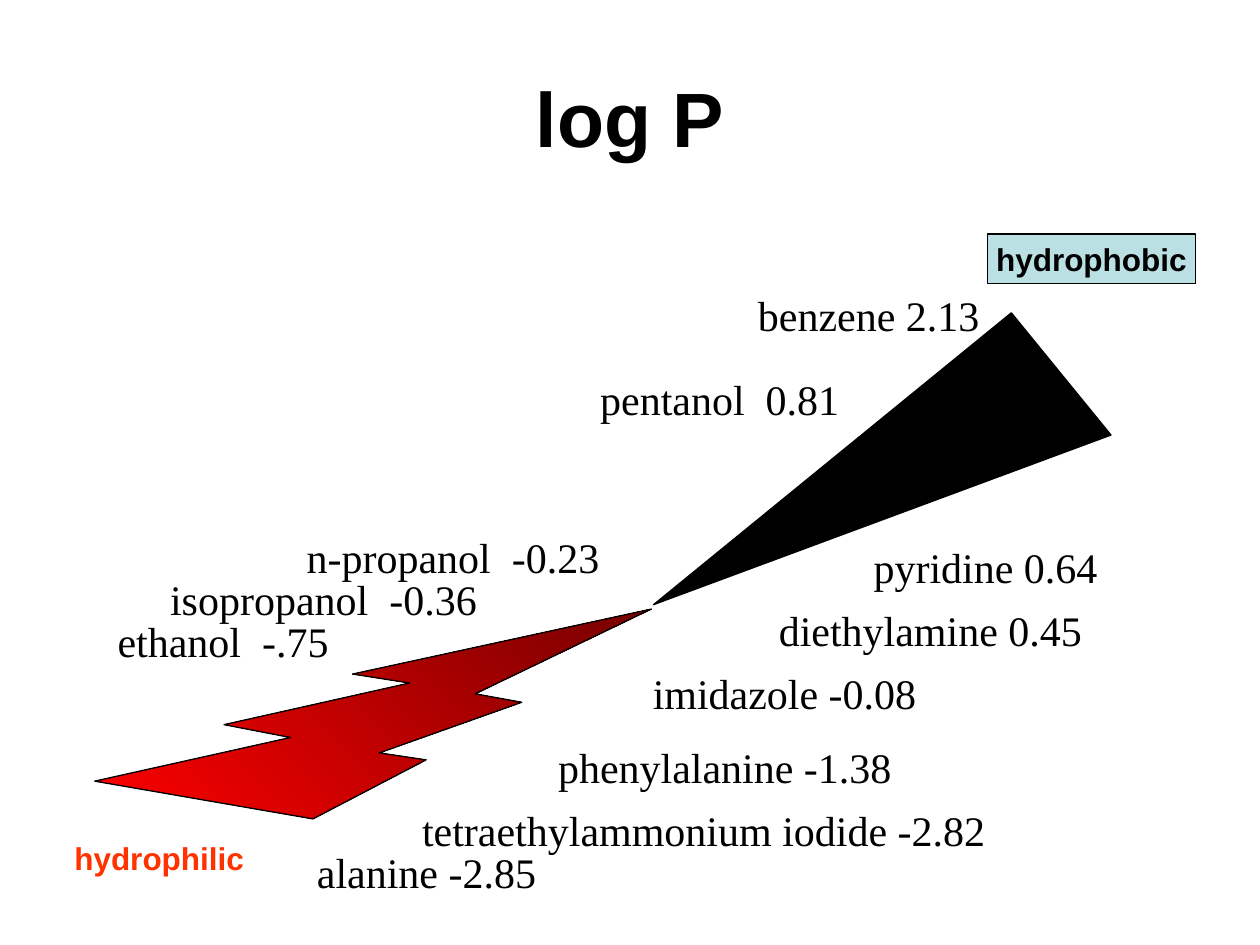
from dataclasses import dataclass

from pptx import Presentation
from pptx.dml.color import RGBColor as Rgb
from pptx.enum.shapes import MSO_SHAPE as Kind
from pptx.enum.text import MSO_ANCHOR as Anchor, MSO_AUTO_SIZE as Fit, PP_ALIGN as Align
from pptx.util import Cm, Pt


@dataclass(frozen=True)
class Theme:
    sans: str = "Arial"
    serif: str = "Times New Roman"
    black: str = "000000"
    red: str = "FF0000"
    maroon: str = "760000"
    orange: str = "FF3300"
    pale: str = "BBE0E3"
    head: int = 44
    body: int = 24
    tag: int = 18
    line: float = 0.75


def write(frame, text, font, size, color, bold=False, align=Align.LEFT,
          anchor=Anchor.TOP, wrap=True, fit=Fit.NONE):
    frame.word_wrap = wrap
    frame.auto_size = fit
    frame.vertical_anchor = anchor
    para = frame.paragraphs[0]
    para.alignment = align
    run = para.add_run()
    run.text = text
    run.font.name = font
    run.font.size = Pt(size)
    run.font.bold = bold
    run.font.color.rgb = Rgb.from_string(color)


class Page:
    def __init__(self, slide, theme):
        self.slide = slide
        self.theme = theme

    def title(self, text, box):
        t = self.theme
        head = self.slide.shapes.title
        head.left, head.top, head.width, head.height = map(Cm, box)
        write(head.text_frame, text, t.sans, t.head, t.black, bold=True,
              align=Align.CENTER, anchor=Anchor.MIDDLE)

    def label(self, text, box, **form):
        area = self.slide.shapes.add_textbox(*map(Cm, box))
        write(area.text_frame, text, fit=Fit.SHAPE_TO_FIT_TEXT, **form)

    def shape(self, kind, box, fill, turn=0, flip=False):
        """Draw a preset; a pair of colours as fill gives a gradient."""
        item = self.slide.shapes.add_shape(kind, *map(Cm, box))
        item.shadow.inherit = False
        item.rotation = turn
        if flip:
            item._element.spPr.xfrm.set("flipV", "1")
        if isinstance(fill, tuple):
            item.fill.gradient()
            item.fill.gradient_angle = 315
            for stop, color in zip(item.fill.gradient_stops, fill):
                stop.color.rgb = Rgb.from_string(color)
        else:
            item.fill.solid()
            item.fill.fore_color.rgb = Rgb.from_string(fill)
        item.line.color.rgb = Rgb.from_string(self.theme.black)
        item.line.width = Pt(self.theme.line)
        return item


# Text, left, top and width in cm
VALUES = [
    ("ethanol  -.75", 2.12, 12.28, 5.93),
    ("pentanol  0.81", 11.85, 7.41, 5.5),
    ("isopropanol  -0.36", 3.18, 11.43, 7.41),
    ("n-propanol  -0.23", 5.93, 10.58, 7.62),
    ("benzene 2.13", 15.03, 5.72, 5.29),
    ("tetraethylammonium iodide -2.82", 8.26, 16.09, 13.55),
    ("phenylalanine -1.38", 11, 14.82, 7.83),
    ("alanine -2.85", 6.14, 16.93, 5.5),
    ("pyridine 0.64", 17.36, 10.8, 5.93),
    ("imidazole -0.08", 12.91, 13.34, 6.35),
    ("diethylamine 0.45", 15.45, 12.07, 7.41),
]


def main():
    deck = Presentation()
    deck.slide_width, deck.slide_height = Cm(25.4), Cm(19.05)
    t = Theme()
    page = Page(deck.slides.add_slide(deck.slide_layouts[5]), t)

    page.title("log P", (1.27, 0.76, 22.86, 3.18))
    page.shape(Kind.LIGHTNING_BOLT, (1.91, 12.28, 11.22, 4.23),
               (t.red, t.maroon), flip=True)
    page.shape(Kind.RIGHT_TRIANGLE, (13.13, 8.89, 9.31, 3.18),
               t.black, turn=140.8)
    for text, left, top, width in VALUES:
        page.label(text, (left, top, width, 1.27),
                   font=t.serif, size=t.body, color=t.black)
    page.label("hydrophilic", (1.25, 16.79, 4.06, 1.02),
               font=t.sans, size=t.tag, color=t.orange, bold=True)
    tag = page.shape(Kind.RECTANGLE, (19.91, 4.72, 4.19, 0.99), t.pale)
    write(tag.text_frame, "hydrophobic", t.sans, t.tag, t.black, bold=True,
          align=Align.CENTER, anchor=Anchor.MIDDLE, wrap=False)

    deck.save("out.pptx")


if __name__ == "__main__":
    main()
